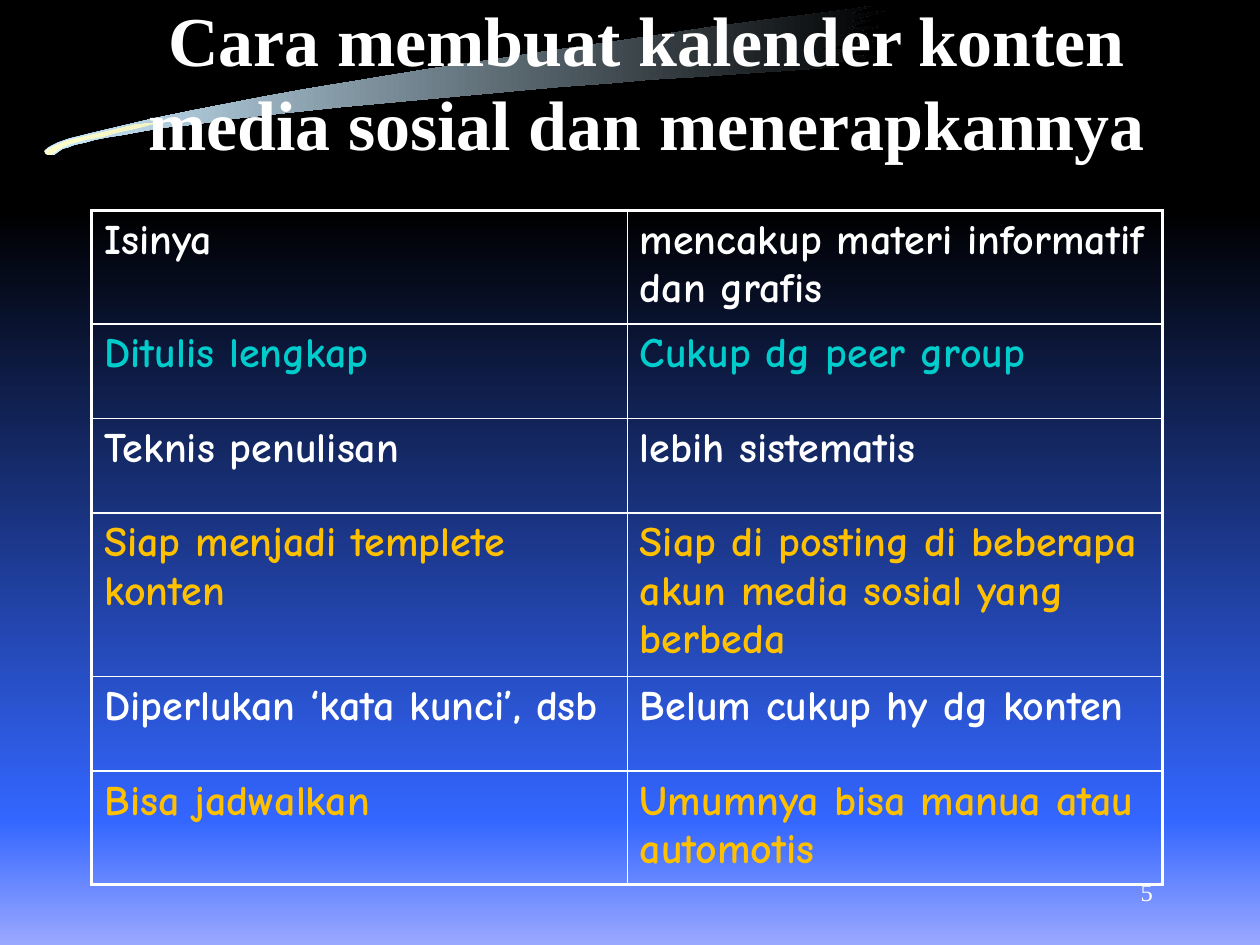
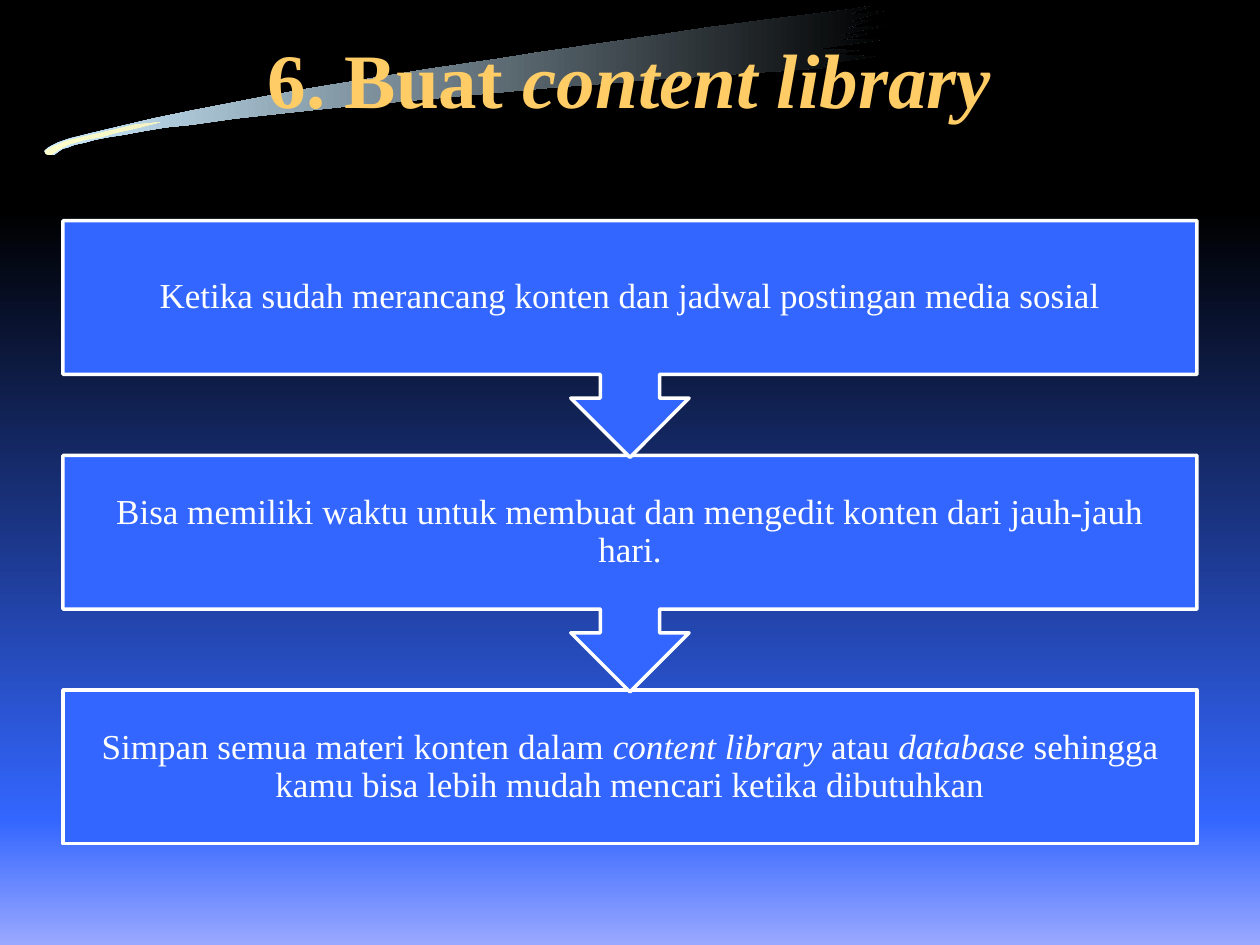
from dataclasses import dataclass
from typing import NamedTuple

from lxml import etree
from pptx import Presentation
from pptx import util as u
from pptx.dml.color import RGBColor
from pptx.enum import shapes, text
from pptx.oxml import ns


@dataclass(frozen=True)
class Theme:
    black: str = "000000"
    white: str = "FFFFFF"
    blue: str = "3366FF"
    periwinkle: str = "9AA8FF"
    ice: str = "CCECFF"
    cream: str = "FFFFCC"
    dark_cream: str = "F3F3C3"
    teal: str = "00CCCC"
    amber: str = "FFC000"
    gold: str = "FFCC66"
    serif: str = "Times New Roman"
    comic: str = "Comic Neue"
    table_title_size: int = 40
    title_size: int = 44
    cell_size: int = 24
    step_size: int = 20
    number_size: int = 14
    outer_border: float = 2.25
    inner_border: float = 1
    step_border: float = 2


THEME = Theme()


class Frame(NamedTuple):
    left: float
    top: float
    width: float
    height: float

    def lengths(self) -> list:
        return [u.Cm(value) for value in self]


class Span(NamedTuple):
    words: str
    italic: bool = False


class Band(NamedTuple):
    frame: Frame
    start: str
    end: str


class Stroke(NamedTuple):
    points: list
    start: str
    end: str


class Row(NamedTuple):
    left: str
    right: str
    color: str


BANDS = [
    Band(Frame(0, 4.24, 25.4, 12.27), THEME.black, THEME.blue),
    Band(Frame(0, 16.51, 25.4, 2.54), THEME.blue, THEME.periwinkle),
]

STROKES = [
    Stroke([
        (665, 53), (650, 51), (694, 45), (660, 43), (681, 40), (647, 39),
        (703, 31), (664, 32), (688, 27), (661, 29), (703, 20), (669, 23),
        (691, 16), (670, 18), (701, 9), (673, 12), (690, 5), (671, 8),
        (647, 11), (614, 15), (561, 22), (528, 27), (494, 32), (425, 42),
        (394, 47), (373, 50), (339, 55), (296, 62), (241, 71), (208, 77),
        (151, 88), (122, 94), (71, 106), (55, 110), (46, 113), (38, 117),
        (36, 119), (35, 120), (36, 122), (38, 123), (43, 123), (47, 120),
        (50, 118), (54, 117), (59, 115), (68, 113), (75, 111), (85, 109),
        (98, 107), (114, 104), (132, 101), (152, 99), (187, 94), (214, 91),
        (270, 85), (335, 79), (389, 74), (443, 69), (484, 66), (517, 63),
        (553, 61), (594, 58), (625, 56),
    ], THEME.ice, THEME.black),
    Stroke([
        (36, 119), (39, 118), (42, 116), (45, 115), (52, 112), (64, 109),
        (86, 104), (107, 99), (127, 97), (108, 102), (94, 105), (80, 109),
        (68, 111), (54, 115), (47, 119), (44, 121), (41, 123), (38, 123),
        (36, 122), (36, 121),
    ], THEME.cream, THEME.dark_cream),
]

ROWS = [
    Row("Isinya", "mencakup materi informatif dan grafis", THEME.white),
    Row("Ditulis lengkap", "Cukup dg peer group", THEME.teal),
    Row("Teknis penulisan", "lebih sistematis", THEME.white),
    Row("Siap menjadi templete konten",
        "Siap di posting di beberapa akun media sosial yang berbeda", THEME.amber),
    Row("Diperlukan ‘kata kunci’, dsb", "Belum cukup hy dg konten", THEME.white),
    Row("Bisa jadwalkan", "Umumnya bisa manua atau automotis", THEME.amber),
]

STEPS = [
    [Span("Ketika sudah merancang konten dan jadwal postingan media sosial")],
    [Span("Bisa memiliki waktu untuk membuat dan mengedit konten dari jauh-jauh hari.")],
    [
        Span("Simpan semua materi konten dalam "),
        Span("content library", italic=True),
        Span(" atau "),
        Span("database", italic=True),
        Span(" sehingga kamu bisa lebih mudah mencari ketika dibutuhkan"),
    ],
]


def add_text(para, words: str, *, size: float, color: str = THEME.white,
             font: str = THEME.serif, bold: bool = False, italic: bool = False) -> None:
    run = para.add_run()
    run.text = words
    run.font.name = font
    run.font.size = u.Pt(size)
    run.font.bold = bold
    run.font.italic = italic
    run.font.color.rgb = RGBColor.from_string(color)


def fill_gradient(shape, start: str, end: str, angle: float) -> None:
    shape.shadow.inherit = False
    shape.line.fill.background()
    shape.fill.gradient()
    shape.fill.gradient_angle = angle
    for stop, color in zip(shape.fill.gradient_stops, (start, end)):
        stop.color.rgb = RGBColor.from_string(color)


def add_page(deck):
    page = deck.slides.add_slide(deck.slide_layouts[6])
    page.background.fill.solid()
    page.background.fill.fore_color.rgb = RGBColor.from_string(THEME.black)
    for band in BANDS:
        shape = page.shapes.add_shape(shapes.MSO_SHAPE.RECTANGLE, *band.frame.lengths())
        fill_gradient(shape, band.start, band.end, 270)
    for stroke in STROKES:
        builder = page.shapes.build_freeform(*stroke.points[0], scale=u.Cm(2.54) / 100)
        builder.add_line_segments(stroke.points[1:], close=True)
        fill_gradient(builder.convert_to_shape(), stroke.start, stroke.end, 0)
    return page


def add_box(page, frame: Frame, align):
    box = page.shapes.add_textbox(*frame.lengths()).text_frame
    box.word_wrap = True
    box.vertical_anchor = text.MSO_ANCHOR.MIDDLE
    box.paragraphs[0].alignment = align
    return box


def add_title(page, frame: Frame, spans: list[Span], size: int, color: str) -> None:
    box = add_box(page, frame, text.PP_ALIGN.CENTER)
    box.margin_bottom = u.Cm(0.13) + u.Pt(size * 1.2)
    for span in spans:
        add_text(box.paragraphs[0], span.words, size=size, color=color,
                 bold=True, italic=span.italic)


def set_border(cell, side: str, width: float, position: int) -> None:
    line = etree.Element(ns.qn(f"a:ln{side}"), w=str(u.Pt(width)))
    fill = etree.SubElement(line, ns.qn("a:solidFill"))
    etree.SubElement(fill, ns.qn("a:srgbClr"), val=THEME.white)
    cell._tc.get_or_add_tcPr().insert(position, line)


def add_comparison(page, frame: Frame, rows: list[Row]) -> None:
    table = page.shapes.add_table(len(rows), 2, *frame.lengths()).table
    table.first_row = False
    table.horz_banding = False
    for index, row in enumerate(rows):
        for column, words in enumerate((row.left, row.right)):
            cell = table.cell(index, column)
            cell.fill.background()
            outer = {"L": column == 0, "R": column == 1,
                     "T": index == 0, "B": index == len(rows) - 1}
            for position, (side, is_outer) in enumerate(outer.items()):
                width = THEME.outer_border if is_outer else THEME.inner_border
                set_border(cell, side, width, position)
            add_text(cell.text_frame.paragraphs[0], words, size=THEME.cell_size,
                     color=row.color, font=THEME.comic, bold=True)


def add_step(page, kind, frame: Frame, spans: list[Span]) -> None:
    shape = page.shapes.add_shape(kind, *frame.lengths())
    shape.shadow.inherit = False
    shape.fill.solid()
    shape.fill.fore_color.rgb = RGBColor.from_string(THEME.blue)
    shape.line.color.rgb = RGBColor.from_string(THEME.white)
    shape.line.width = u.Pt(THEME.step_border)
    box = shape.text_frame
    box.word_wrap = True
    box.vertical_anchor = text.MSO_ANCHOR.MIDDLE
    box.margin_left = box.margin_right = box.margin_top = box.margin_bottom = u.Cm(0.4)
    para = box.paragraphs[0]
    para.alignment = text.PP_ALIGN.CENTER
    para.line_spacing = 0.9
    for span in spans:
        add_text(para, span.words, size=THEME.step_size, italic=span.italic)


def build_calendar_page(deck) -> None:
    page = add_page(deck)
    number = add_box(page, Frame(18.21, 17.35, 5.28, 1.27), text.PP_ALIGN.RIGHT)
    add_text(number.paragraphs[0], "5", size=THEME.number_size)
    add_title(page, Frame(2.24, 0.89, 21.59, 3.18),
              [Span("Cara membuat kalender konten media sosial dan menerapkannya")],
              THEME.table_title_size, THEME.white)
    add_comparison(page, Frame(1.85, 4.24, 21.59, 11.43), ROWS)


def build_library_page(deck) -> None:
    page = add_page(deck)
    add_title(page, Frame(1.9, 1.12, 21.59, 2.77),
              [Span("6. Buat "), Span("content library", italic=True)],
              THEME.title_size, THEME.gold)
    first_top, pitch = 4.45, 4.73
    last = len(STEPS) - 1
    for index in reversed(range(len(STEPS))):
        if index == last:
            kind, height = shapes.MSO_SHAPE.RECTANGLE, 3.1
        else:
            kind, height = shapes.MSO_SHAPE.DOWN_ARROW_CALLOUT, 4.77
        add_step(page, kind, Frame(1.27, first_top + index * pitch, 22.86, height),
                 STEPS[index])


def main() -> None:
    deck = Presentation()
    deck.slide_width = u.Cm(25.4)
    deck.slide_height = u.Cm(19.05)
    build_calendar_page(deck)
    build_library_page(deck)
    deck.save("out.pptx")


if __name__ == "__main__":
    main()
